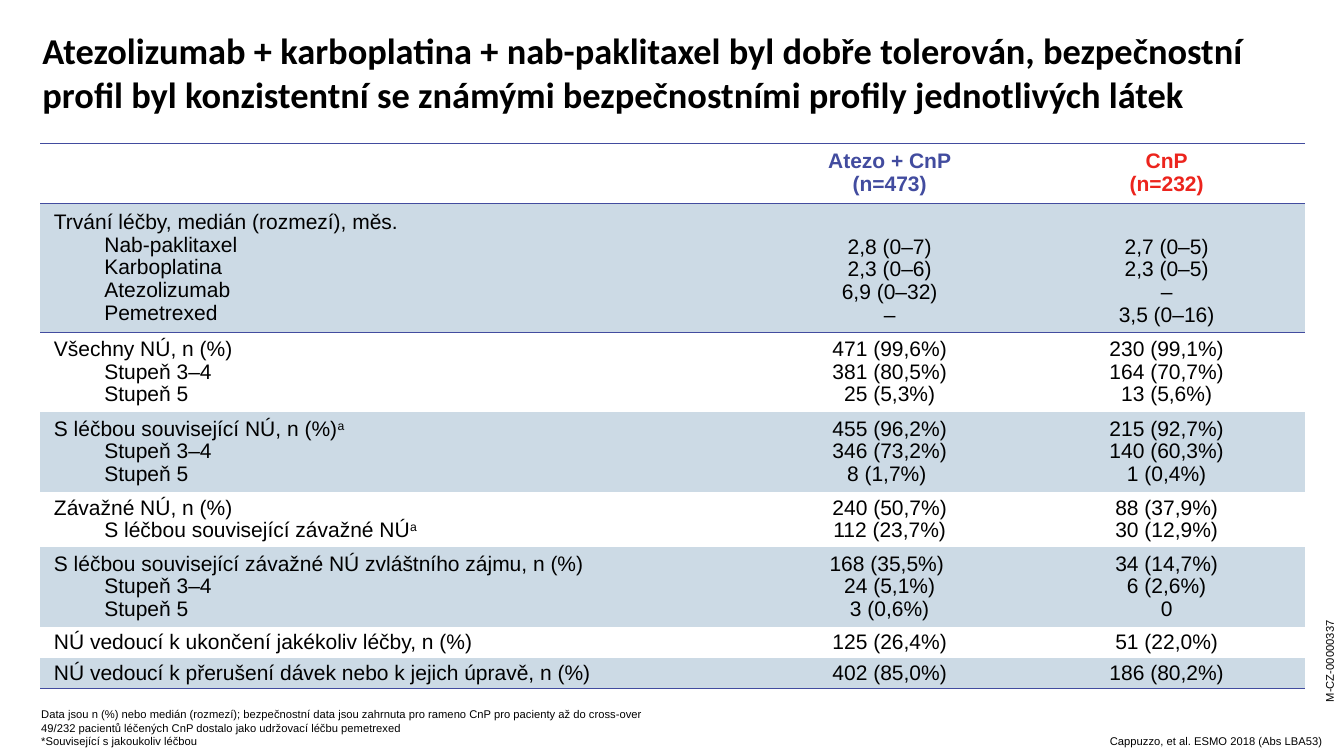
from dataclasses import dataclass

import pptx
import pptx.dml.color
import pptx.enum.text
import pptx.oxml
import pptx.oxml.ns
import pptx.util
from pptx.util import Cm

ALIGN = pptx.enum.text.PP_ALIGN
ANCHOR = pptx.enum.text.MSO_ANCHOR
NO_TABLE_STYLE = "{2D5ABB26-0587-4C30-8999-92F81FD0307C}"


@dataclass(frozen=True)
class Theme:
    heading_font: str = "Calibri"
    body_font: str = "Arial"
    title_size: float = 26
    table_size: float = 15
    note_size: float = 8
    rule_width: float = 0.75
    table_spacing: float = 0.97
    text: str = "000000"
    atezo: str = "424C9F"
    control: str = "EC241D"
    band: str = "CCDAE5"


THEME = Theme()

TITLE = ("Atezolizumab + karboplatina + nab-paklitaxel byl dobře tolerován, bezpečnostní "
         "profil byl konzistentní se známými bezpečnostními profily jednotlivých látek")
FOOTNOTES = [
    "Data jsou n (%) nebo medián (rozmezí); bezpečnostní data jsou zahrnuta "
    "pro rameno CnP pro pacienty až do cross-over",
    "49/232 pacientů léčených CnP dostalo jako udržovací léčbu pemetrexed",
    "*Související s jakoukoliv léčbou",
]
HEADINGS = [("Atezo + CnP\n(n=473)", THEME.atezo), ("CnP\n(n=232)", THEME.control)]

# Row height in cm, then the lines of each column; "^" starts a superscript
ROWS = [
    (3.25, ["Trvání léčby, medián (rozmezí), měs.", "Nab-paklitaxel", "Karboplatina",
            "Atezolizumab", "Pemetrexed"],
     ["2,8 (0–7)", "2,3 (0–6)", "6,9 (0–32)", "–"],
     ["2,7 (0–5)", "2,3 (0–5)", "–", "3,5 (0–16)"]),
    (2.0, ["Všechny NÚ, n (%)", "Stupeň 3–4", "Stupeň 5"],
     ["471 (99,6%)", "381 (80,5%)", "25 (5,3%)"],
     ["230 (99,1%)", "164 (70,7%)", "13 (5,6%)"]),
    (2.0, ["S léčbou související NÚ, n (%)^a", "Stupeň 3–4", "Stupeň 5"],
     ["455 (96,2%)", "346 (73,2%)", "8 (1,7%) "],
     ["215 (92,7%)", "140 (60,3%)", "1 (0,4%)"]),
    (1.38, ["Závažné NÚ, n (%)", "S léčbou související závažné NÚ^a"],
     ["240 (50,7%)", "112 (23,7%)"],
     ["88 (37,9%)", "30 (12,9%)"]),
    (2.0, ["S léčbou související závažné NÚ zvláštního zájmu, n (%)", "Stupeň 3–4", "Stupeň 5"],
     ["168 (35,5%) ", "24 (5,1%)\n3 (0,6%)"],
     ["34 (14,7%)", "6 (2,6%)\n0"]),
    (0.76, ["NÚ vedoucí k ukončení jakékoliv léčby, n (%)"],
     ["125 (26,4%)"], ["51 (22,0%)"]),
    (0.76, ["NÚ vedoucí k přerušení dávek nebo k jejich úpravě, n (%)"],
     ["402 (85,0%)"], ["186 (80,2%)"]),
]
HEADER_HEIGHT = 1.52
COLUMN_WIDTHS = [17.91, 6.98, 6.98]
RULED_BELOW = {0, 1, len(ROWS)}


def rgb(color):
    return pptx.dml.color.RGBColor.from_string(color)


def add_run(paragraph, text, size, color=THEME.text, bold=False, font=THEME.body_font,
            superscript=False):
    run = paragraph.add_run()
    run.text = text
    run.font.name = font
    run.font.size = pptx.util.Pt(size)
    run.font.bold = bold
    run.font.color.rgb = rgb(color)
    if superscript:
        run.font._element.set("baseline", "30000")


def paragraphs_for(frame, lines):
    """Yield a paragraph for each line of text."""
    for index, line in enumerate(lines):
        yield (frame.add_paragraph() if index else frame.paragraphs[0]), line


def add_text_box(slide, box, lines, size, anchor=ANCHOR.BOTTOM, align=ALIGN.LEFT, **style):
    shape = slide.shapes.add_textbox(*(Cm(length) for length in box))
    frame = shape.text_frame
    frame.word_wrap = True
    frame.vertical_anchor = anchor
    frame.margin_left = frame.margin_right = frame.margin_top = frame.margin_bottom = 0
    for paragraph, line in paragraphs_for(frame, lines):
        paragraph.alignment = align
        add_run(paragraph, line, size, **style)
    return shape


def add_rule(cell, side):
    """Draw one horizontal border; side is T or B."""
    width = pptx.util.Pt(THEME.rule_width)
    cell._tc.get_or_add_tcPr().append(pptx.oxml.parse_xml(
        f'<a:ln{side} {pptx.oxml.ns.nsdecls("a")} w="{width}"><a:solidFill>'
        f'<a:srgbClr val="{THEME.atezo}"/></a:solidFill></a:ln{side}>'))


def fill_cell(cell, lines, align, indent_rest=False, **style):
    for index, (paragraph, line) in enumerate(paragraphs_for(cell.text_frame, lines)):
        paragraph.alignment = align
        paragraph.line_spacing = THEME.table_spacing
        if indent_rest and index:
            paragraph.level = 1
            properties = paragraph._p.get_or_add_pPr()
            properties.set("marL", str(Cm(1.27)))
            properties.set("indent", "0")
        for part_index, part in enumerate(line.split("\n")):
            if part_index:
                paragraph.add_line_break()
            base, _, raised = part.partition("^")
            add_run(paragraph, base, THEME.table_size, **style)
            if raised:
                add_run(paragraph, raised, THEME.table_size, superscript=True, **style)


def format_cell(cell, row_index):
    cell.vertical_anchor = ANCHOR.MIDDLE
    cell.margin_left = cell.margin_right = Cm(0.34)
    cell.margin_top = cell.margin_bottom = Cm(0.08)
    if row_index == 0:
        add_rule(cell, "T")
    if row_index in RULED_BELOW:
        add_rule(cell, "B")
    if row_index % 2 or row_index == len(ROWS):
        cell.fill.solid()
        cell.fill.fore_color.rgb = rgb(THEME.band)
    else:
        cell.fill.background()
    # Empty cells and line ends keep the table type size
    cell.text_frame.paragraphs[0].font.size = pptx.util.Pt(THEME.table_size)


def add_safety_table(slide):
    heights = [HEADER_HEIGHT] + [row[0] for row in ROWS]
    frame = slide.shapes.add_table(len(heights), len(COLUMN_WIDTHS), Cm(1.02), Cm(3.61),
                                   Cm(sum(COLUMN_WIDTHS)), Cm(sum(heights)))
    table = frame.table
    table.first_row = table.horz_banding = False
    table._tbl.tblPr.find(pptx.oxml.ns.qn("a:tableStyleId")).text = NO_TABLE_STYLE
    for column, width in zip(table.columns, COLUMN_WIDTHS):
        column.width = Cm(width)
    for row_index, (row, height) in enumerate(zip(table.rows, heights)):
        row.height = Cm(height)
        for cell in row.cells:
            format_cell(cell, row_index)

    # Treatment arms
    for column, (heading, color) in enumerate(HEADINGS, 1):
        fill_cell(table.cell(0, column), [heading], ALIGN.CENTER, color=color, bold=True)

    # Labels and values
    for row_index, (_, labels, *arms) in enumerate(ROWS, 1):
        fill_cell(table.cell(row_index, 0), labels, ALIGN.LEFT, indent_rest=True)
        for column, values in enumerate(arms, 1):
            fill_cell(table.cell(row_index, column), values, ALIGN.CENTER)

    # Duration values line up with the drugs below the first label
    for column in (1, 2):
        cell = table.cell(1, column)
        cell.vertical_anchor = ANCHOR.BOTTOM
        cell.margin_bottom = Cm(0.15)


def main():
    presentation = pptx.Presentation()
    presentation.slide_width = Cm(33.87)
    presentation.slide_height = Cm(19.05)
    slide = presentation.slides.add_slide(presentation.slide_layouts[6])

    # Title
    add_text_box(slide, (1.07, 0.66, 30.4, 2.31), [TITLE], THEME.title_size,
                 anchor=ANCHOR.MIDDLE, font=THEME.heading_font, bold=True)

    # Safety results
    add_safety_table(slide)

    # Footnotes, citation and document code
    add_text_box(slide, (1.04, 17.65, 21.29, 1.2), FOOTNOTES, THEME.note_size)
    add_text_box(slide, (18.14, 17.63, 15.19, 1.2), ["Cappuzzo, et al. ESMO 2018 (Abs LBA53)"],
                 THEME.note_size, align=ALIGN.RIGHT)
    code = add_text_box(slide, (32.21, 16.36, 2.59, 0.61), ["M-CZ-00000337"], THEME.note_size,
                        anchor=ANCHOR.MIDDLE, align=ALIGN.CENTER)
    code.rotation = 270

    presentation.save("out.pptx")


if __name__ == "__main__":
    main()
